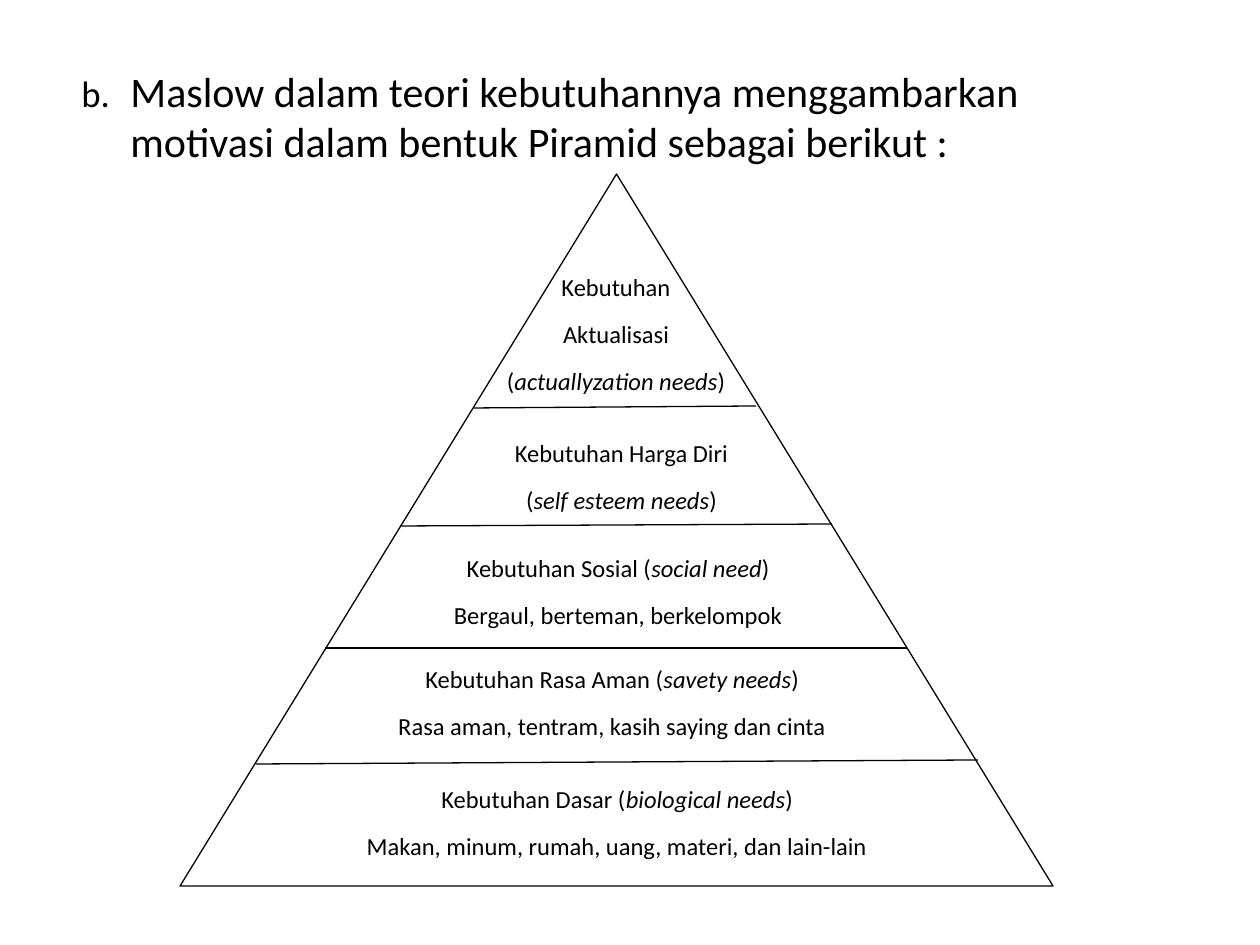
from lxml.etree import SubElement
from pptx import Presentation
from pptx.dml.color import RGBColor
from pptx.enum.shapes import MSO_CONNECTOR, MSO_SHAPE
from pptx.enum.text import PP_ALIGN
from pptx.oxml.ns import qn
from pptx.util import Pt

PX = 914400 / 126
COLORS = {"ink": "000000"}
INK = RGBColor.from_string(COLORS["ink"])


def emu(*lengths):
    return [round(length * PX) for length in lengths]


def add_text(text, shapes, box, size=14, align=PP_ALIGN.CENTER, after=10, marker="", marker_size=21, indent=0):
    frame = shapes.add_textbox(*emu(*box)).text_frame
    frame.word_wrap = True
    for index, line in enumerate(text.split("\n")):
        paragraph = frame.paragraphs[0] if index == 0 else frame.add_paragraph()
        paragraph.alignment = align
        paragraph.space_after = Pt(after)
        pieces = [(piece, size, part % 2 == 1) for part, piece in enumerate(line.split("*"))]
        if marker:
            margin = str(emu(indent)[0])
            properties = paragraph._p.get_or_add_pPr()
            properties.set("marL", margin)
            properties.set("indent", "-" + margin)
            tabs = SubElement(properties, qn("a:tabLst"))
            SubElement(tabs, qn("a:tab"), pos=margin, algn="l")
            pieces.insert(0, (marker + "\t", marker_size, False))
        for piece, points, italic in pieces:
            run = paragraph.add_run()
            run.text = piece
            run.font.name = "Calibri"
            run.font.size = Pt(points)
            run.font.italic = italic
            run.font.color.rgb = INK


prs = Presentation()
prs.slide_width, prs.slide_height = emu(1260, 945)
slide = prs.slides.add_slide(prs.slide_layouts[6])

add_text(
    "Maslow dalam teori kebutuhannya menggambarkan motivasi dalam bentuk Piramid sebagai berikut :",
    slide.shapes, (69, 59, 1103, 599),
    size=24, align=PP_ALIGN.LEFT, after=0, marker="b. ", indent=49,
)

pyramid = slide.shapes.add_group_shape().shapes
outline = pyramid.add_shape(MSO_SHAPE.FLOWCHART_EXTRACT, *emu(180, 174, 873, 712))
outline.shadow.inherit = False
outline.fill.background()
outline.line.color.rgb = INK
outline.line.width = Pt(0.75)

needs = [
    ("Kebutuhan\nAktualisasi\n(*actuallyzation needs*)", (482, 266, 268, 147)),
    ("Kebutuhan Harga Diri\n(*self esteem needs*)", (476, 432, 291, 103)),
    ("Kebutuhan Sosial (*social need*)\nBergaul, berteman, berkelompok", (402, 547, 432, 103)),
    ("Kebutuhan Rasa Aman (*savety needs*)\nRasa aman, tentram, kasih saying dan cinta", (333, 658, 558, 103)),
    ("Kebutuhan Dasar (*biological needs*)\nMakan, minum, rumah, uang, materi, dan lain-lain", (338, 778, 558, 103)),
]
for need, box in needs:
    add_text(need, pyramid, box)

dividers = [
    (474, 408, 756, 406),
    (400, 526, 832, 524),
    (325, 648, 907, 648),
    (256, 764, 978, 760),
]
for ends in dividers:
    divider = pyramid.add_connector(MSO_CONNECTOR.STRAIGHT, *emu(*ends))
    divider.line.color.rgb = INK
    divider.line.width = Pt(0.75)
    SubElement(divider._element.spPr, qn("a:effectLst"))

prs.save("out.pptx")
